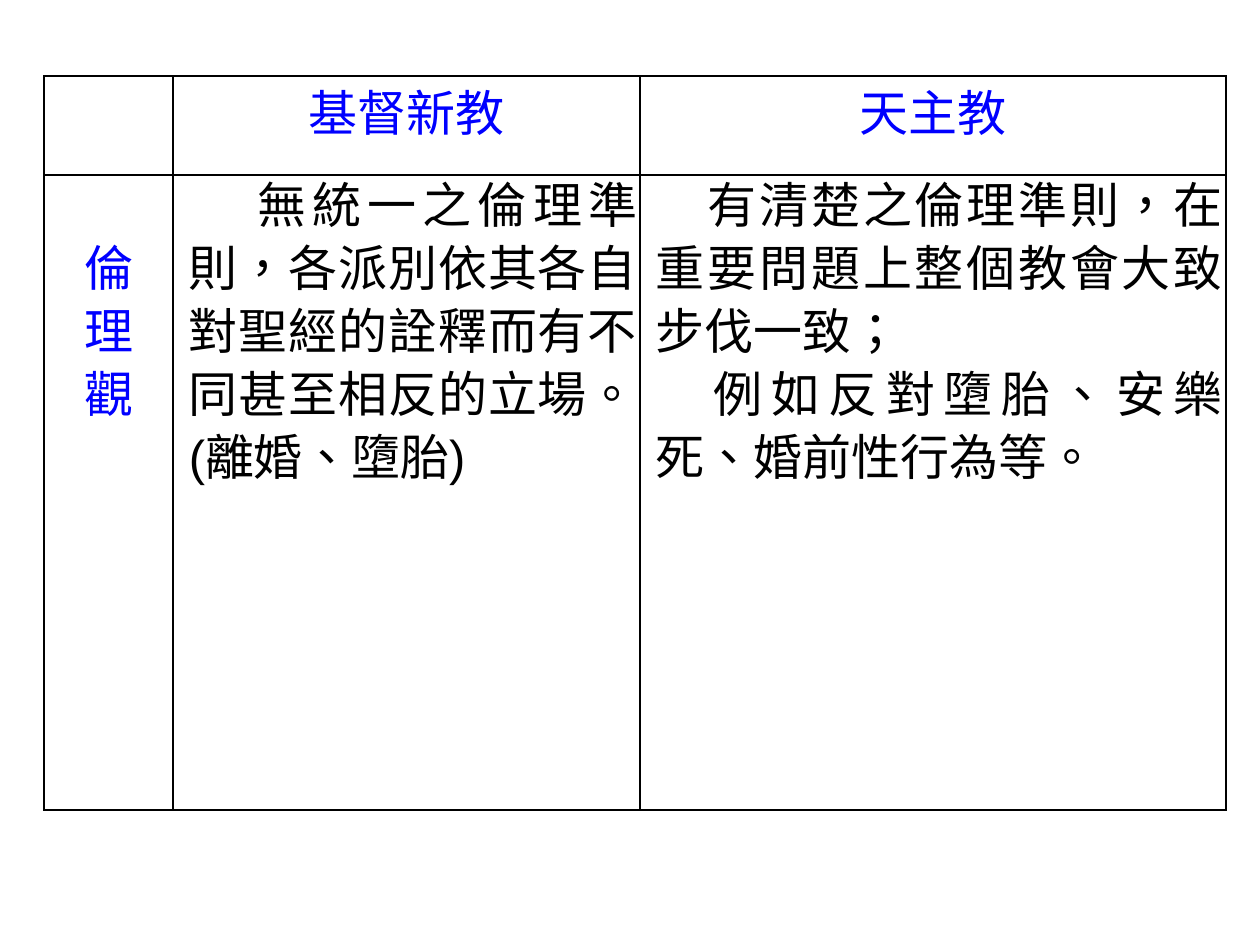
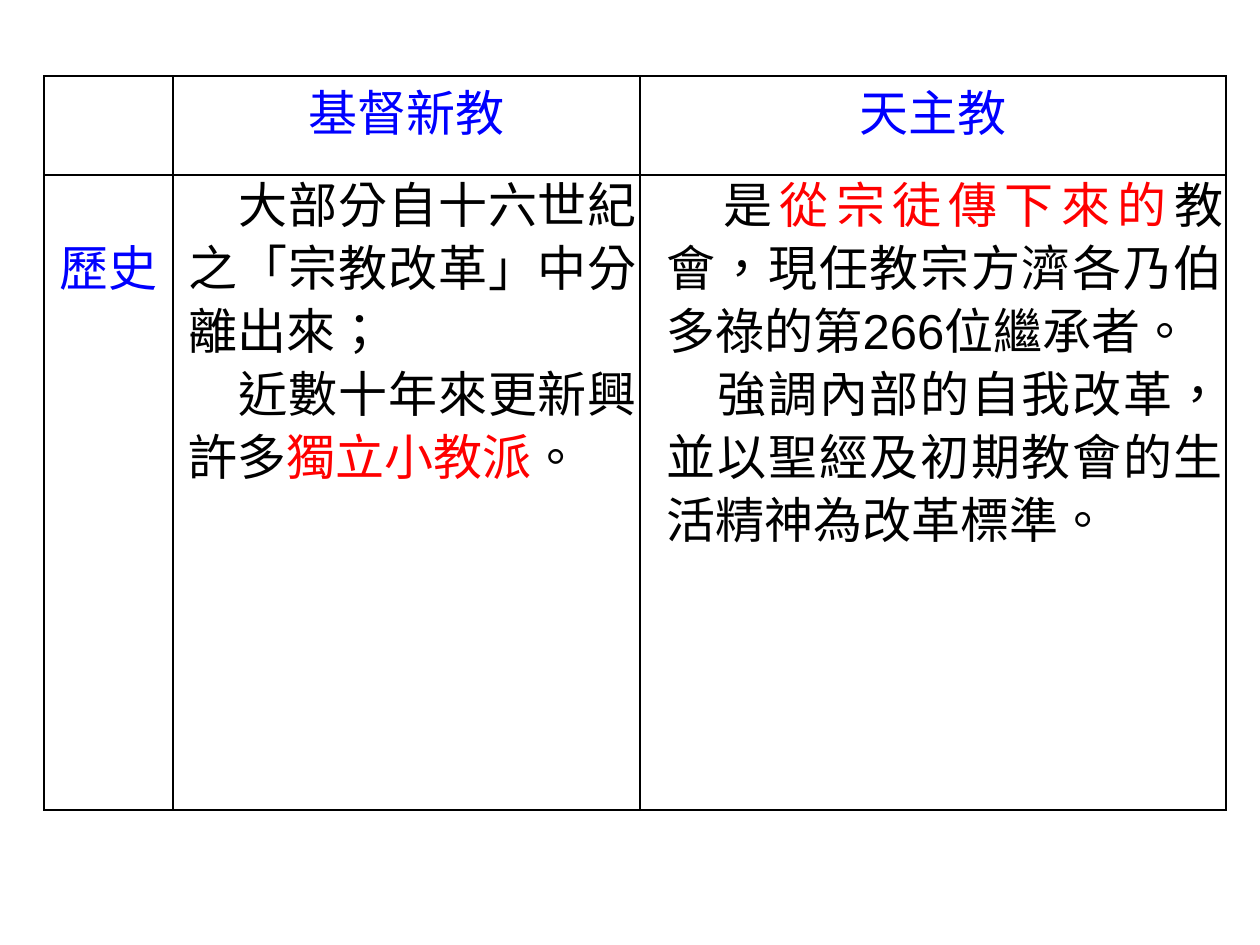
from dataclasses import dataclass

import pptx
import pptx.dml.color
import pptx.enum.lang
import pptx.enum.text
import pptx.oxml
import pptx.oxml.ns
import pptx.util

EMU_PER_PX = 914400 / 126
COLORS = {"paper": "FFFFFF", "rule": "000000", "body": "000000", "heading": "0000FF", "accent": "FF0000"}
FONT_NAME = "Arial"
FONT_SIZE = 28
HEADING_LEADING = 40
BODY_LEADING = 36
TABLE_LEFT, TABLE_TOP = 44, 76
COLUMN_WIDTHS = (129, 467, 586)
ROW_HEIGHTS = (99, 635)
SIDE_MARGIN = 3
LABEL_DROP = 63
HEADINGS = ("基督新教", "天主教")
ALIGN = pptx.enum.text.PP_ALIGN


@dataclass(frozen=True)
class Span:
    text: str
    color: str = "body"
    spacing: int = 0


@dataclass(frozen=True)
class Para:
    spans: tuple[Span, ...]
    align: ALIGN = ALIGN.JUSTIFY
    leading: int = BODY_LEADING
    margin: int = 0
    indent: int = 0


@dataclass(frozen=True)
class Comparison:
    label: tuple[str, ...]
    protestant: tuple[Para, ...]
    catholic: tuple[Para, ...]


COMPARISONS = (
    Comparison(
        label=("倫", "理", "觀"),
        protestant=(
            Para(
                (Span("　無統一之倫理準則，各派別依其各自對聖經的詮釋而有不同甚至相反的立場。(離婚、墮胎)", spacing=-10),),
                margin=13,
                indent=13,
            ),
        ),
        catholic=(
            Para((Span("　有清楚之倫理準則，在重要問題上整個教會大致步伐一致；"),), margin=13),
            Para((Span("　例如反對墮胎、安樂死、婚前性行為等。"),), margin=13),
        ),
    ),
    Comparison(
        label=("歷史",),
        protestant=(
            Para((Span("　大部分自十六世紀之「宗教改革」中分離出來；"),), margin=13),
            Para((Span("　近數十年來更新興許多"), Span("獨立小教派", "accent"), Span("。")), margin=13),
        ),
        catholic=(
            Para(
                (
                    Span("　是"),
                    Span("從宗徒傳下來的", "accent"),
                    Span("教會，現任教宗方濟各乃伯多祿的第266位繼承者。"),
                ),
                margin=24,
            ),
            Para((Span("　強調內部的自我改革，並以聖經及初期教會的生活精神為改革標準。"),), margin=24),
        ),
    ),
)


def px(length: int) -> pptx.util.Emu:
    return pptx.util.Emu(round(length * EMU_PER_PX))


def rgb(name: str) -> pptx.dml.color.RGBColor:
    return pptx.dml.color.RGBColor.from_string(COLORS[name])


def heading(text: str, leading: int) -> Para:
    return Para((Span(text, "heading"),), ALIGN.CENTER, leading)


def add_text(para, text: str, *, color: str, spacing: int) -> None:
    span = para.add_run()
    span.text = text
    span.font.name = FONT_NAME
    span.font.size = pptx.util.Pt(FONT_SIZE)
    span.font.color.rgb = rgb(color)
    span.font.language_id = pptx.enum.lang.MSO_LANGUAGE_ID.TRADITIONAL_CHINESE
    if spacing:
        span._r.get_or_add_rPr().set("spc", str(spacing))


def fill_cell(cell, paras: tuple[Para, ...], top: int = 0) -> None:
    cell.margin_left = cell.margin_right = px(SIDE_MARGIN)
    cell.margin_top, cell.margin_bottom = px(top), px(0)
    for index, content in enumerate(paras):
        frame = cell.text_frame
        para = frame.add_paragraph() if index else frame.paragraphs[0]
        para.alignment = content.align
        para.line_spacing = pptx.util.Pt(content.leading)
        properties = para._p.get_or_add_pPr()
        properties.set("marL", str(px(content.margin)))
        properties.set("indent", str(px(content.indent)))
        properties.set("hangingPunct", "0")
        for span in content.spans:
            add_text(para, span.text, color=span.color, spacing=span.spacing)


def frame_cell(cell) -> None:
    properties = cell._tc.get_or_add_tcPr()
    for side in ("lnL", "lnR", "lnT", "lnB"):
        properties.append(
            pptx.oxml.parse_xml(
                f'<a:{side} {pptx.oxml.ns.nsdecls("a")} w="{pptx.util.Pt(1)}"><a:solidFill>'
                f'<a:srgbClr val="{COLORS["rule"]}"/></a:solidFill></a:{side}>'
            )
        )
    cell.fill.solid()
    cell.fill.fore_color.rgb = rgb("paper")


def add_comparison(deck, comparison: Comparison) -> None:
    page = deck.slides.add_slide(deck.slide_layouts[6])
    table = page.shapes.add_table(
        len(ROW_HEIGHTS),
        len(COLUMN_WIDTHS),
        px(TABLE_LEFT),
        px(TABLE_TOP),
        px(sum(COLUMN_WIDTHS)),
        px(sum(ROW_HEIGHTS)),
    ).table
    table.first_row = table.horz_banding = False
    for column, width in zip(table.columns, COLUMN_WIDTHS):
        column.width = px(width)
    for row, height in zip(table.rows, ROW_HEIGHTS):
        row.height = px(height)
    for cell in table.iter_cells():
        frame_cell(cell)
    for column, title in enumerate(HEADINGS, start=1):
        fill_cell(table.cell(0, column), (heading(title, HEADING_LEADING),))
    label = tuple(heading(text, BODY_LEADING) for text in comparison.label)
    fill_cell(table.cell(1, 0), label, top=LABEL_DROP)
    fill_cell(table.cell(1, 1), comparison.protestant)
    fill_cell(table.cell(1, 2), comparison.catholic)


def main() -> None:
    deck = pptx.Presentation()
    deck.slide_width, deck.slide_height = px(1260), px(945)
    for comparison in COMPARISONS:
        add_comparison(deck, comparison)
    deck.save("out.pptx")


if __name__ == "__main__":
    main()
